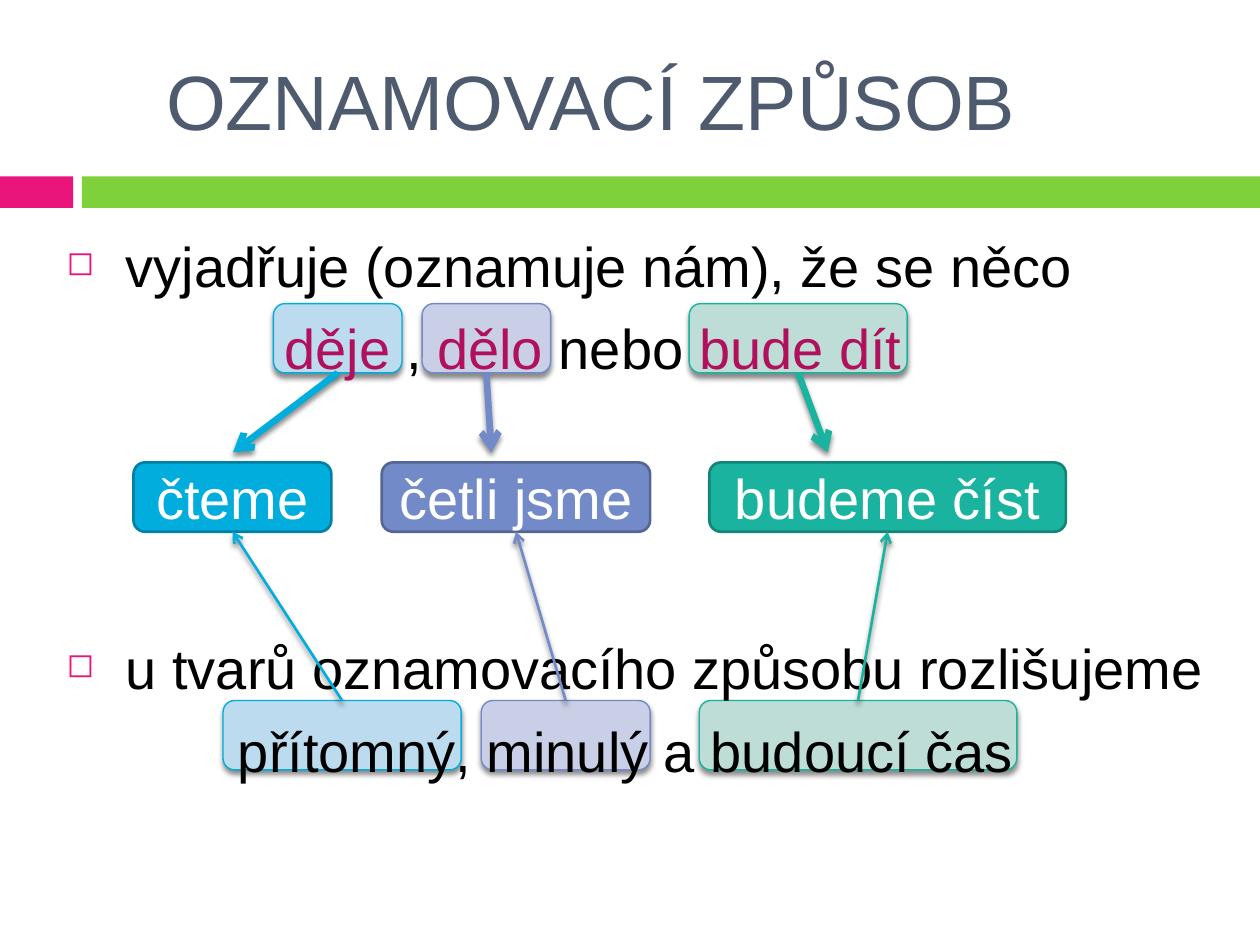
"""Build the slide on the indicative mood and its three tenses."""
from lxml.etree import SubElement
from pptx import Presentation
from pptx.dml.color import RGBColor
from pptx.enum.shapes import MSO_CONNECTOR, MSO_SHAPE
from pptx.enum.text import MSO_ANCHOR, PP_ALIGN
from pptx.oxml.ns import qn
from pptx.util import Inches, Pt

COLORS = {
    "pink": "EA157A", "green": "7FD13B", "title": "4E5B6F",
    "text": "000000", "accent": "B0105C", "white": "FFFFFF",
    "present": "00ADDC", "present_light": "BDDBEE", "present_dark": "0080A3",
    "past": "738AC8", "past_light": "C9CFE6", "past_dark": "556694",
    "future": "1AB39F", "future_light": "BDDDD6", "future_dark": "138476",
}
TITLE = "OZNAMOVACÍ ZPŮSOB"
BANDS = [(0, 0.58, "pink"), (0.65, 9.35, "green")]
LINES = [
    (True, 0.47, 0, [("vyjadřuje (oznamuje nám), že se něco", "text")]),
    (False, 1.73, 8.5, [("děje ", "accent"), (", ", "text"), ("dělo", "accent"),
                        (" nebo ", "text"), ("bude dít", "accent")]),
    (True, 0.47, 144.5, [("u tvarů oznamovacího způsobu rozlišujeme", "text")]),
    (False, 1.36, 8.5, [("přítomný, minulý a budoucí čas", "text")]),
]
TENSES = [
    {"name": "present", "event": (2.17, 1.02), "verb": (1.06, 1.57),
     "tense": (1.77, 1.89), "label": "čteme", "tip": 1.85},
    {"name": "past", "event": (3.35, 1.02), "verb": (3.03, 2.13),
     "tense": (3.82, 1.34), "label": "četli jsme", "tip": 3.9},
    {"name": "future", "event": (5.47, 1.73), "verb": (5.63, 2.83),
     "tense": (5.55, 2.52), "label": "budeme číst", "tip": 6.57},
]
ROWS = {"event": 2.41, "verb": 3.67, "tense": 5.56}
BOX_H, TIP_Y = 0.55, 3.59


def rgb(name):
    return RGBColor.from_string(COLORS[name])


def add_run(p, text, color, size):
    r = p.add_run()
    r.text = text
    for key, value in {"name": "Arial", "size": Pt(size)}.items():
        setattr(r.font, key, value)
    r.font.color.rgb = rgb(color)


def add_text(s, left, top, width, height, anchor):
    tf = s.shapes.add_textbox(*map(Inches, (left, top, width, height))).text_frame
    for key, value in {"word_wrap": True, "vertical_anchor": anchor}.items():
        setattr(tf, key, value)
    return tf


def add_block(s, kind, left, top, width, height, fill, line=None, weight=0):
    sp = s.shapes.add_shape(kind, *map(Inches, (left, top, width, height)))
    sp.shadow.inherit = False
    sp.fill.solid()
    sp.fill.fore_color.rgb = rgb(fill)
    if line:
        sp.line.color.rgb = rgb(line)
        sp.line.width = Pt(weight)
    else:
        sp.line.fill.background()
    return sp


def add_shadow(effects):
    shadow = SubElement(effects, qn("a:outerShdw"), blurRad=str(Pt(3)),
                        dist=str(Pt(2.4)), dir="5400000", rotWithShape="0")
    color = SubElement(shadow, qn("a:srgbClr"), val=COLORS["text"])
    SubElement(color, qn("a:alpha"), val="45000")


def add_tint(s, tense, row):
    left, width = tense[row]
    name = tense["name"]
    sp = add_block(s, MSO_SHAPE.ROUNDED_RECTANGLE, left, ROWS[row], width, BOX_H,
                   f"{name}_light", name, 0.79)
    add_shadow(sp.element.spPr.find(qn("a:effectLst")))
    return sp


def add_verb(s, tense):
    left, width = tense["verb"]
    name = tense["name"]
    sp = add_block(s, MSO_SHAPE.ROUNDED_RECTANGLE, left, ROWS["verb"], width, BOX_H,
                   name, f"{name}_dark", 1.5)
    tf = sp.text_frame
    for key, value in {"word_wrap": False, "vertical_anchor": MSO_ANCHOR.MIDDLE}.items():
        setattr(tf, key, value)
    p = tf.paragraphs[0]
    p.alignment = PP_ALIGN.CENTER
    add_run(p, tense["label"], "white", 32)
    return sp


def add_arrow(s, start, site, color, weight, tip=0, target=None):
    cxn = s.shapes.add_connector(MSO_CONNECTOR.STRAIGHT, 0, 0,
                                 Inches(tip), Inches(TIP_Y))
    cxn.begin_connect(start, site)
    if target is not None:
        cxn.end_connect(target, 2)
    cxn.line.color.rgb = rgb(color)
    cxn.line.width = Pt(weight)
    SubElement(cxn.line._get_or_add_ln(), qn("a:tailEnd"), type="arrow")
    add_shadow(SubElement(cxn.element.spPr, qn("a:effectLst")))


def add_body(s):
    tf = add_text(s, 0.43, 1.79, 9.57, 5.5, MSO_ANCHOR.TOP)
    for i, (bullet, margin, gap, runs) in enumerate(LINES):
        p = tf.paragraphs[0] if i == 0 else tf.add_paragraph()
        p.space_before = Pt(gap)
        pPr = p._p.get_or_add_pPr()
        pPr.set("marL", str(Inches(margin)))
        if bullet:
            pPr.set("indent", str(-Inches(margin)))
            color = SubElement(pPr, qn("a:buClr"))
            SubElement(color, qn("a:srgbClr"), val=COLORS["pink"])
            SubElement(pPr, qn("a:buSzPct"), val="60000")
            SubElement(pPr, qn("a:buChar"), char="◻")
        for text, color in runs:
            add_run(p, text, color, 32)


def main():
    prs = Presentation()
    prs.slide_width, prs.slide_height = Inches(10), Inches(7.5)
    s = prs.slides.add_slide(prs.slide_layouts[6])
    for left, width, color in BANDS:
        add_block(s, MSO_SHAPE.RECTANGLE, left, 1.4, width, 0.25, color)
    tenses = [add_tint(s, tense, "tense") for tense in TENSES]
    events = [add_tint(s, tense, "event") for tense in TENSES]
    title = add_text(s, 1.22, 0.25, 8.37, 1.08, MSO_ANCHOR.MIDDLE)
    add_run(title.paragraphs[0], TITLE, "title", 44)
    add_body(s)
    verbs = [add_verb(s, tense) for tense in TENSES]
    for tense, event, verb, box in zip(TENSES, events, verbs, tenses):
        add_arrow(s, event, 2, tense["name"], 3.75, tip=tense["tip"])
        add_arrow(s, box, 0, tense["name"], 1.5, target=verb)
    prs.save("out.pptx")


if __name__ == "__main__":
    main()
